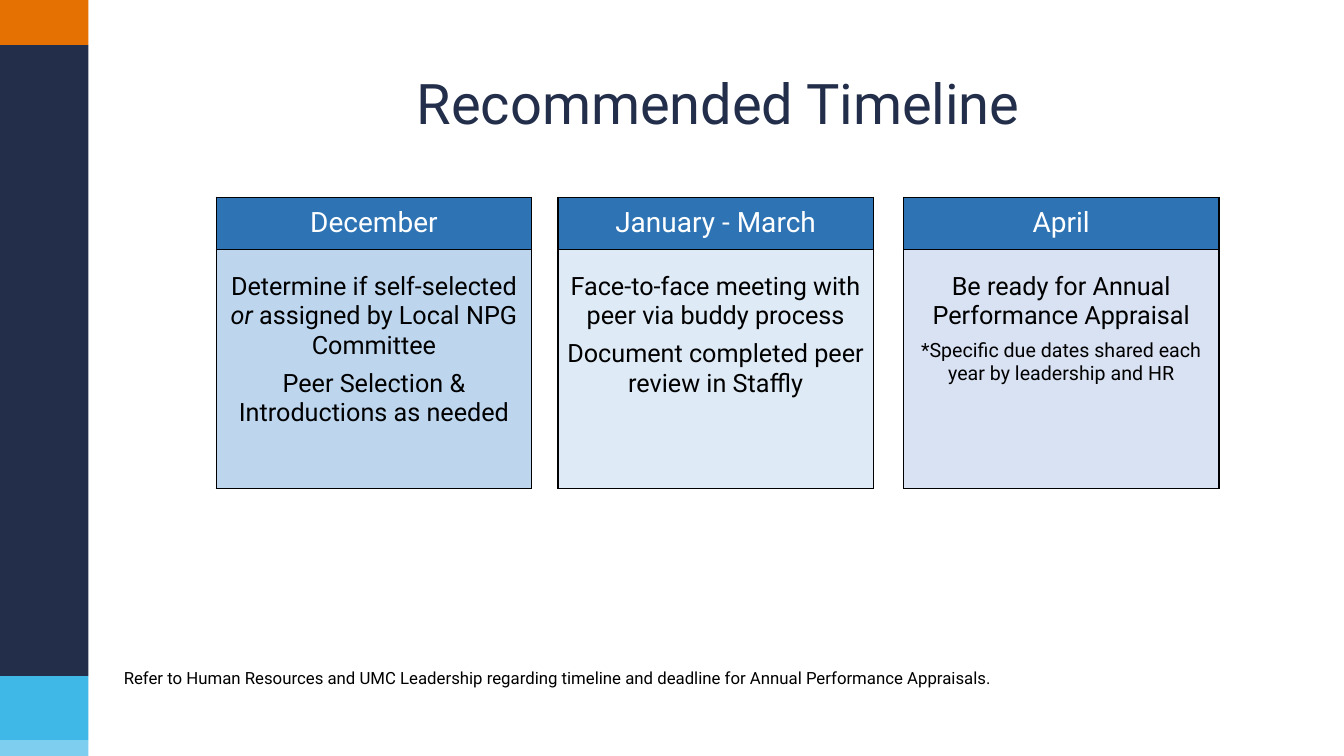
from lxml import etree
from pptx import Presentation
from pptx.dml.color import RGBColor
from pptx.enum.shapes import MSO_SHAPE
from pptx.enum.text import MSO_ANCHOR, PP_ALIGN
from pptx.oxml.ns import qn
from pptx.util import Cm, Pt

RECT = MSO_SHAPE.RECTANGLE
TOP, MIDDLE = MSO_ANCHOR.TOP, MSO_ANCHOR.MIDDLE
LEFT, CENTER = PP_ALIGN.LEFT, PP_ALIGN.CENTER

FONT = "Roboto"
COLORS = {
    "orange": "E57102", "navy": "222E4A", "sky": "40B8E7", "pale": "7ECEEF",
    "head": "2E74B5", "first": "BDD6EE", "second": "DEEAF6", "third": "D9E2F3",
    "black": "000000", "white": "FFFFFF",
}
BANDS = [("orange", 1.14), ("navy", 15.9), ("sky", 1.61), ("pale", 0.4)]
STAGES = [
    ("December", "first", [
        ("Determine if self-selected |or| assigned by Local NPG Committee", 18),
        ("Peer Selection & Introductions as needed", 18)]),
    ("January - March", "second", [
        ("Face-to-face meeting with peer via buddy process", 18),
        ("Document completed peer review in Staffly", 18)]),
    ("April", "third", [
        ("Be ready for Annual Performance Appraisal", 18),
        ("*Specific due dates shared each year by leadership and HR", 14)]),
]
NOTE = ("Refer to Human Resources and UMC Leadership regarding timeline "
        "and deadline for Annual Performance Appraisals.")


class Deck:
    """Holds the style and the current slide, and draws each kind of element."""

    def __init__(self):
        self.file = Presentation()
        self.file.slide_width, self.file.slide_height = Cm(33.87), Cm(19.05)
        self.slide = self.file.slides.add_slide(self.file.slide_layouts[5])

    def color(self, name):
        return RGBColor.from_string(COLORS[name])

    def text(self, para, words, size, color, align=CENTER):
        para.alignment = align
        for index, part in enumerate(words.split("|")):
            run = para.add_run()
            run.text = part
            font = run.font
            font.name, font.size = FONT, Pt(size)
            font.bold, font.italic = False, index % 2 == 1
            font.color.rgb = self.color(color)

    def place(self, shape, left, top, width, height):
        shape.left, shape.top = Cm(left), Cm(top)
        shape.width, shape.height = Cm(width), Cm(height)

    def title(self, words, *box):
        shape = self.slide.shapes.title
        self.place(shape, *box)
        frame = shape.text_frame
        frame.vertical_anchor = TOP
        para = frame.paragraphs[0]
        para.line_spacing = 0.9
        self.text(para, words, 40, "navy")

    def band(self, color, *box):
        shape = self.slide.shapes.add_shape(RECT, *map(Cm, box))
        shape.shadow.inherit = False
        shape.fill.solid()
        shape.fill.fore_color.rgb = self.color(color)
        shape.line.fill.background()

    def note(self, words, *box):
        frame = self.slide.shapes.add_textbox(*map(Cm, box)).text_frame
        frame.word_wrap = True
        self.text(frame.paragraphs[0], words, 12, "black", LEFT)

    def border(self, cell, sides):
        props = cell._tc.get_or_add_tcPr()
        for index, side in enumerate("LRTB"):
            line = etree.Element(qn("a:ln" + side), w=str(Pt(1)))
            if side in sides:
                fill = etree.SubElement(line, qn("a:solidFill"))
                etree.SubElement(fill, qn("a:srgbClr"), val=COLORS["black"])
            else:
                etree.SubElement(line, qn("a:noFill"))
            props.insert(index, line)

    def cell(self, cell, fill, items, color, anchor, top):
        cell.fill.solid()
        cell.fill.fore_color.rgb = self.color(fill)
        self.border(cell, "LRTB")
        cell.vertical_anchor = anchor
        cell.margin_left = cell.margin_right = Cm(0.18)
        cell.margin_top, cell.margin_bottom = Cm(top), 0
        frame = cell.text_frame
        for index, (words, size) in enumerate(items):
            para = frame.add_paragraph() if index else frame.paragraphs[0]
            if index:
                para.space_before = Pt(6)
            self.text(para, words, size, color)

    def table(self, stages, left, top, widths, heights):
        shape = self.slide.shapes.add_table(
            len(heights), len(widths), Cm(left), Cm(top),
            Cm(sum(widths)), Cm(sum(heights)))
        table = shape.table
        table.first_row = table.horz_banding = False
        for column, width in zip(table.columns, widths):
            column.width = Cm(width)
        for row, height in zip(table.rows, heights):
            row.height = Cm(height)
        for gap in range(1, len(widths), 2):
            table.cell(0, gap).merge(table.cell(1, gap))
            for row in range(2):
                table.cell(row, gap).fill.background()
                self.border(table.cell(row, gap), "LR")
        for index, (month, fill, items) in enumerate(stages):
            head, body = (table.cell(row, 2 * index) for row in range(2))
            self.cell(head, "head", [(month, 20)], "white", MIDDLE, 0)
            self.cell(body, fill, items, "black", TOP, 0.56)


def main():
    deck = Deck()
    top = 0
    for color, height in BANDS:
        deck.band(color, 0, top, 2.23, height)
        top += height
    deck.title("Recommended Timeline", 2.34, 1.78, 31.52, 3.23)
    deck.note(NOTE, 2.87, 16.69, 25.27, 0.77)
    deck.table(STAGES, 5.45, 4.97, [7.95, 0.66, 7.95, 0.76, 7.95], [1.32, 6.02])
    deck.file.save("out.pptx")


if __name__ == "__main__":
    main()
